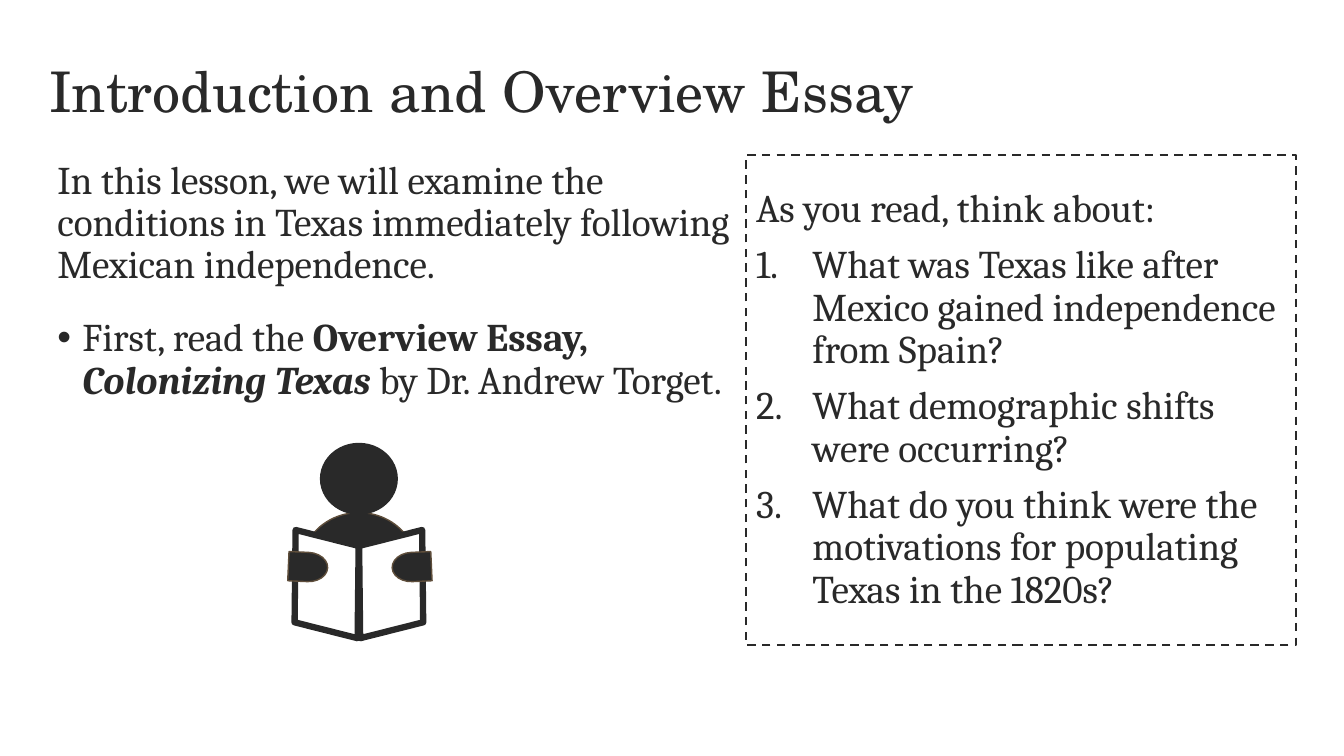
import pptx
import pptx.dml.color
import pptx.enum.dml
import pptx.enum.shapes
import pptx.enum.text
import pptx.util
from lxml import etree

Inches = pptx.util.Inches
Pt = pptx.util.Pt
Preset = pptx.enum.shapes.MSO_SHAPE
Anchor = pptx.enum.text.MSO_ANCHOR
DARK = "292929"
BROWN = "5F4E3B"
WHITE = "FFFFFF"
MAIN = "http://schemas.openxmlformats.org/drawingml/2006/main"


def color(value):
    return pptx.dml.color.RGBColor.from_string(value)


class LessonSlide:
    """Draws the elements of a lesson slide in one shared style."""

    def __init__(self, slide):
        self.slide = slide

    def text(self, box, anchor):
        shape = self.slide.shapes.add_textbox(*map(Inches, box))
        self.prepare(shape.text_frame, anchor)
        return shape.text_frame

    def prepare(self, frame, anchor):
        frame.word_wrap = True
        frame.vertical_anchor = anchor

    def paragraph(self, frame, runs, size=28, font="Cambria", before=0, after=0,
                  indent=0, bullet=None):
        first = not frame.paragraphs[0].runs
        paragraph = frame.paragraphs[0] if first else frame.add_paragraph()
        if bullet:
            properties = paragraph._p.get_or_add_pPr()
            properties.set("marL", str(Inches(indent)))
            properties.set("indent", str(-Inches(indent)))
            tag, attributes = bullet
            if tag == "buChar":
                etree.SubElement(properties, f"{{{MAIN}}}buFont", typeface="Arial")
            etree.SubElement(properties, f"{{{MAIN}}}{tag}", attributes)
        paragraph.alignment = pptx.enum.text.PP_ALIGN.LEFT
        paragraph.line_spacing = 0.9
        paragraph.space_before = Pt(before)
        paragraph.space_after = Pt(after)
        for words, bold, italic in runs:
            run = paragraph.add_run()
            run.text = words
            run.font.name = font
            run.font.size = Pt(size)
            run.font.bold = bold
            run.font.italic = italic
            run.font.color.rgb = color(DARK)

    def shape(self, parent, preset, box, fill, line, width, rotation=0, flip=False):
        shape = parent.shapes.add_shape(preset, *map(Inches, box))
        shape.shadow.inherit = False
        if fill:
            shape.fill.solid()
            shape.fill.fore_color.rgb = color(fill)
        else:
            shape.fill.background()
        shape.line.color.rgb = color(line)
        shape.line.width = Pt(width)
        shape.rotation = rotation
        if flip:
            shape._element.spPr.xfrm.set("flipH", "1")
        return shape

    def question_box(self, box, heading, questions):
        shape = self.shape(self.slide, Preset.RECTANGLE, box, None, DARK, 1.5)
        shape.line.dash_style = pptx.enum.dml.MSO_LINE.DASH
        self.prepare(shape.text_frame, Anchor.MIDDLE)
        self.paragraph(shape.text_frame, [(heading, False, False)])
        for question in questions:
            self.paragraph(shape.text_frame, [(question, False, False)], before=10,
                           indent=0.56, bullet=("buAutoNum", {"type": "arabicPeriod"}))

    def reader(self):
        group = self.slide.shapes.add_group_shape()
        delay = Preset.FLOWCHART_DELAY
        page = Preset.PARALLELOGRAM
        self.shape(group, delay, (3.02, 5.05, 1.08, 1.15), DARK, BROWN, 1, 270)
        self.shape(group, page, (3.45, 5.35, 0.86, 0.89), WHITE, DARK, 4.5, 345.8)
        self.shape(group, Preset.OVAL, (3.18, 4.4, 0.76, 0.7), DARK, DARK, 1)
        self.shape(group, page, (2.81, 5.35, 0.86, 0.89), WHITE, DARK, 4.5, 14.2, True)
        for left, rotation, flip in ((2.86, 2.5, False), (3.89, 357.5, True)):
            self.shape(group, delay, (left, 5.48, 0.39, 0.29), DARK, BROWN, 1,
                       rotation, flip)


def main():
    presentation = pptx.Presentation()
    presentation.slide_width = Inches(13.33)
    presentation.slide_height = Inches(7.5)
    lesson = LessonSlide(presentation.slides.add_slide(presentation.slide_layouts[6]))

    title = lesson.text((0.39, 0.21, 11.5, 1.45), Anchor.MIDDLE)
    lesson.paragraph(title, [("Introduction and Overview Essay", False, False)],
                     size=40, font="TeX Gyre Schola")

    body = lesson.text((0.47, 1.54, 6.9, 2.95), Anchor.TOP)
    lesson.paragraph(body, [(
        "In this lesson, we will examine the conditions in Texas immediately "
        "following Mexican independence.", False, False)], after=12)
    lesson.paragraph(body, [
        ("First, read the ", False, False),
        ("Overview Essay, ", True, False),
        ("Colonizing Texas ", True, True),
        ("by Dr. Andrew Torget.", False, False),
    ], before=10, indent=0.25, bullet=("buChar", {"char": "•"}))

    lesson.reader()
    lesson.question_box((7.4, 1.54, 5.45, 4.86), "As you read, think about:", [
        "What was Texas like after Mexico gained independence from Spain?",
        "What demographic shifts were occurring?",
        "What do you think were the motivations for populating Texas in the 1820s?",
    ])
    presentation.save("out.pptx")


if __name__ == "__main__":
    main()
